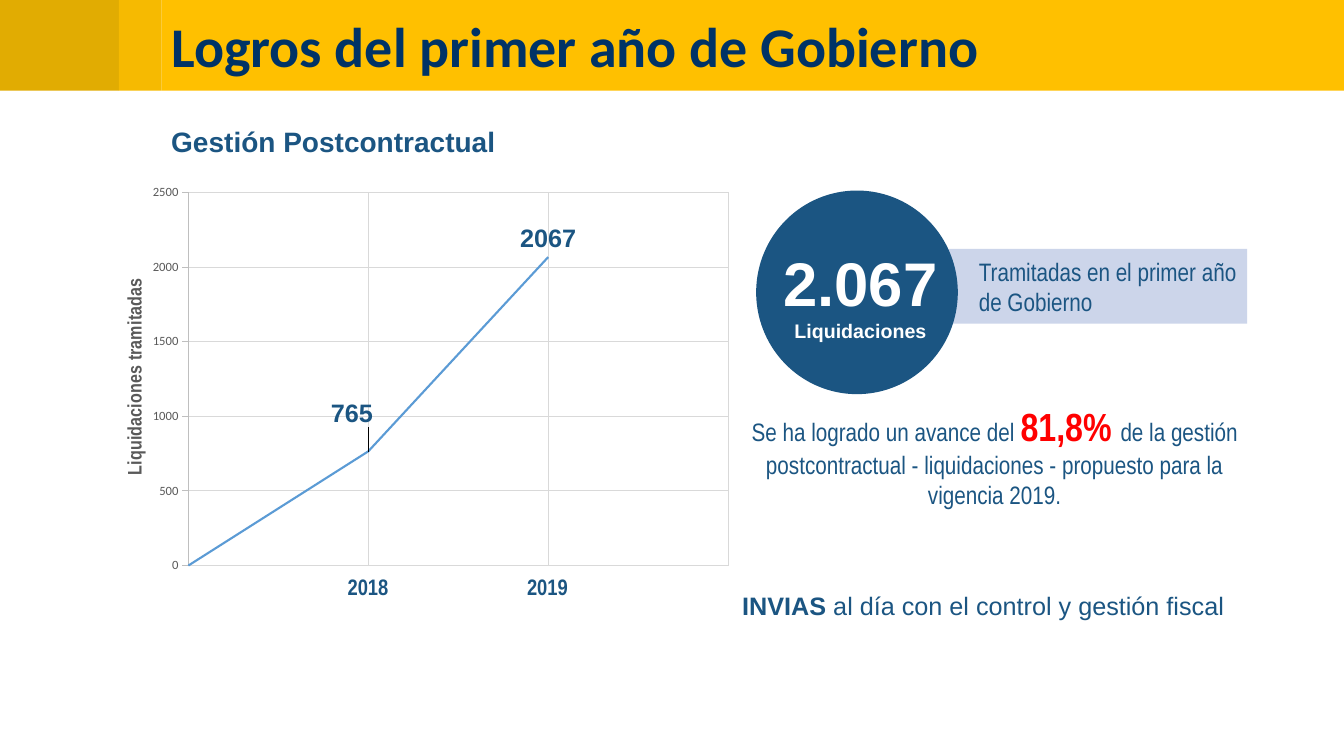
from dataclasses import dataclass

from lxml import etree
from pptx import Presentation
from pptx.chart.data import XyChartData
from pptx.dml.color import RGBColor
from pptx.enum.chart import XL_CHART_TYPE as CT, XL_LABEL_POSITION as LP, XL_TICK_MARK as TM
from pptx.enum.shapes import MSO_SHAPE as MS
from pptx.enum.text import MSO_ANCHOR as MA, PP_ALIGN as PA
from pptx.oxml.ns import qn
from pptx.util import Inches, Pt

COLORS = {
    "gold": "FFC000", "dark_gold": "E1AC02", "mid_gold": "F6BA01",
    "navy": "003366", "blue": "1B5582", "pale_blue": "CCD5EA",
    "curve": "5B9BD5", "grid": "D9D9D9", "axis": "BFBFBF",
    "gray": "595959", "red": "FF0000", "white": "FFFFFF",
}
NARROW = "Arial Narrow"


@dataclass
class Box:
    left: float
    top: float
    width: float
    height: float

    def lengths(self) -> list:
        return [Inches(v) for v in (self.left, self.top, self.width, self.height)]


@dataclass
class Block:
    box: Box
    color: str
    kind: MS = MS.RECTANGLE


@dataclass
class Run:
    text: str
    size: int
    font: str = "Arial"
    color: str = "blue"
    bold: bool = False


@dataclass
class Label:
    box: Box
    paragraphs: list[list[Run]]
    align: PA = PA.LEFT
    spacing: float = 1.0
    anchor: MA = MA.TOP


BANDS = [
    Block(Box(1.6, -0.01, 11.73, 0.91), "gold"),
    Block(Box(0, -0.01, 1.18, 0.91), "dark_gold"),
    Block(Box(1.18, -0.01, 0.42, 0.91), "mid_gold"),
    Block(Box(8.62, 2.47, 3.75, 0.74), "pale_blue"),
]
CIRCLE = Block(Box(7.5, 1.89, 2, 2.02), "blue", MS.OVAL)

LABELS = [
    Label(Box(7.32, 3.94, 5.09, 1.18), [[
        Run("Se ha logrado un avance del ", 18, NARROW),
        Run("81,8% ", 28, NARROW, "red", True),
        Run("de la gestión postcontractual - liquidaciones - propuesto para la vigencia 2019.",
            18, NARROW),
    ]], PA.CENTER),
    Label(Box(6.81, 5.81, 5.43, 0.4), [[
        Run("INVIAS", 18, bold=True),
        Run(" al día con el control y gestión fiscal", 18),
    ]], PA.RIGHT),
    Label(Box(9.61, 2.49, 2.76, 0.71),
          [[Run("Tramitadas en el primer año de Gobierno", 18, NARROW)]]),
    *[Label(Box(3.27 + 1.78 * i, 5.64, 0.76, 0.37),
            [[Run(year, 16, NARROW, bold=True)]], PA.CENTER)
      for i, year in enumerate(("2018", "2019"))],
    Label(Box(1.6, 0.03, 11.09, 0.91),
          [[Run("Logros del primer año de Gobierno", 40, "Calibri", "navy", True)]],
          spacing=0.9, anchor=MA.MIDDLE),
    Label(Box(1.6, 1.02, 5.97, 0.54),
          [[Run("Gestión Postcontractual", 20, bold=True)]], spacing=1.5),
    Label(Box(7.4, 2.38, 2.27, 1.08), [
        [Run("2.067", 44, color="white", bold=True)],
        [Run("Liquidaciones", 14, color="white", bold=True)],
    ], PA.CENTER),
]


def rgb(name: str) -> RGBColor:
    return RGBColor.from_string(COLORS[name])


def style_font(font, size: int, name: str, color: str, bold: bool = False) -> None:
    font.size, font.name, font.bold = Pt(size), name, bold
    font.color.rgb = rgb(color)


def style_line(line, color: str, width: float) -> None:
    line.color.rgb = rgb(color)
    line.width = Pt(width)


def draw_block(slide, block: Block) -> None:
    sp = slide.shapes.add_shape(block.kind, *block.box.lengths())
    sp.shadow.inherit = False
    sp.fill.solid()
    sp.fill.fore_color.rgb = rgb(block.color)
    sp.line.fill.background()


def draw_label(slide, label: Label) -> None:
    tf = slide.shapes.add_textbox(*label.box.lengths()).text_frame
    tf.word_wrap = True
    tf.vertical_anchor = label.anchor
    for i, runs in enumerate(label.paragraphs):
        p = tf.add_paragraph() if i else tf.paragraphs[0]
        p.alignment, p.line_spacing = label.align, label.spacing
        for run in runs:
            r = p.add_run()
            r.text = run.text
            style_font(r.font, run.size, run.font, run.color, run.bold)


def set_layout(parent, index: int, **values) -> None:
    for old in parent.findall(qn("c:layout")):
        parent.remove(old)
    layout = etree.Element(qn("c:layout"))
    manual = etree.SubElement(layout, qn("c:manualLayout"))
    for tag, value in values.items():
        etree.SubElement(manual, qn(f"c:{tag}")).set("val", str(value))
    parent.insert(index, layout)


def draw_chart(slide, box: Box) -> None:
    data = XyChartData()
    points = data.add_series("Series 1")
    for x, y in enumerate((0, 765, 2067)):
        points.add_data_point(x, y)
    chart = slide.shapes.add_chart(CT.XY_SCATTER_SMOOTH_NO_MARKERS, *box.lengths(), data).chart
    chart.has_legend = chart.has_title = False
    chart.font.size, chart.font.name = Pt(10), "Calibri"
    chart.plots[0].vary_by_categories = False
    plot_area = chart._chartSpace.chart.plotArea
    set_layout(plot_area, 0, layoutTarget="inner", xMode="edge", yMode="edge",
               x=0.143, y=0.172, w=0.825, h=0.786)

    x_axis, y_axis = chart.category_axis, chart.value_axis
    for axis, top, step in ((x_axis, 3, 1), (y_axis, 2500, 500)):
        axis.minimum_scale, axis.maximum_scale, axis.major_unit = 0, top, step
        axis.has_major_gridlines = True
        style_line(axis.major_gridlines.format.line, "grid", 0.75)
    x_axis.visible = False
    y_axis.major_tick_mark = TM.OUTSIDE
    style_line(y_axis.format.line, "axis", 0.75)
    style_font(y_axis.tick_labels.font, 9, "Calibri", "gray")
    title = y_axis.axis_title
    title.text_frame.text = "Liquidaciones tramitadas"
    style_font(title.text_frame.paragraphs[0].runs[0].font, 14, NARROW, "gray", True)
    set_layout(title._element, 1, xMode="edge", yMode="edge", x=0.04, y=0.345)

    series = chart.plots[0].series[0]
    series.smooth = True
    style_line(series.format.line, "curve", 1.5)
    for i in (1, 2):
        label = series.points[i].data_label
        style_font(label.font, 18, "Arial", "blue", True)
        label.position = LP.ABOVE
    dlbls = series._element.find(qn("c:dLbls"))
    dlbls.find(qn("c:showVal")).set("val", "0")
    set_layout(dlbls.find(qn("c:dLbl")), 1, x=-0.025, y=-0.042)


def main() -> None:
    prs = Presentation()
    prs.slide_width, prs.slide_height = Inches(13.33), Inches(7.5)
    slide = prs.slides.add_slide(prs.slide_layouts[6])
    for band in BANDS:
        draw_block(slide, band)
    draw_chart(slide, Box(0.94, 1.1, 6.49, 4.71))
    draw_block(slide, CIRCLE)
    for label in LABELS:
        draw_label(slide, label)
    prs.save("out.pptx")


if __name__ == "__main__":
    main()
